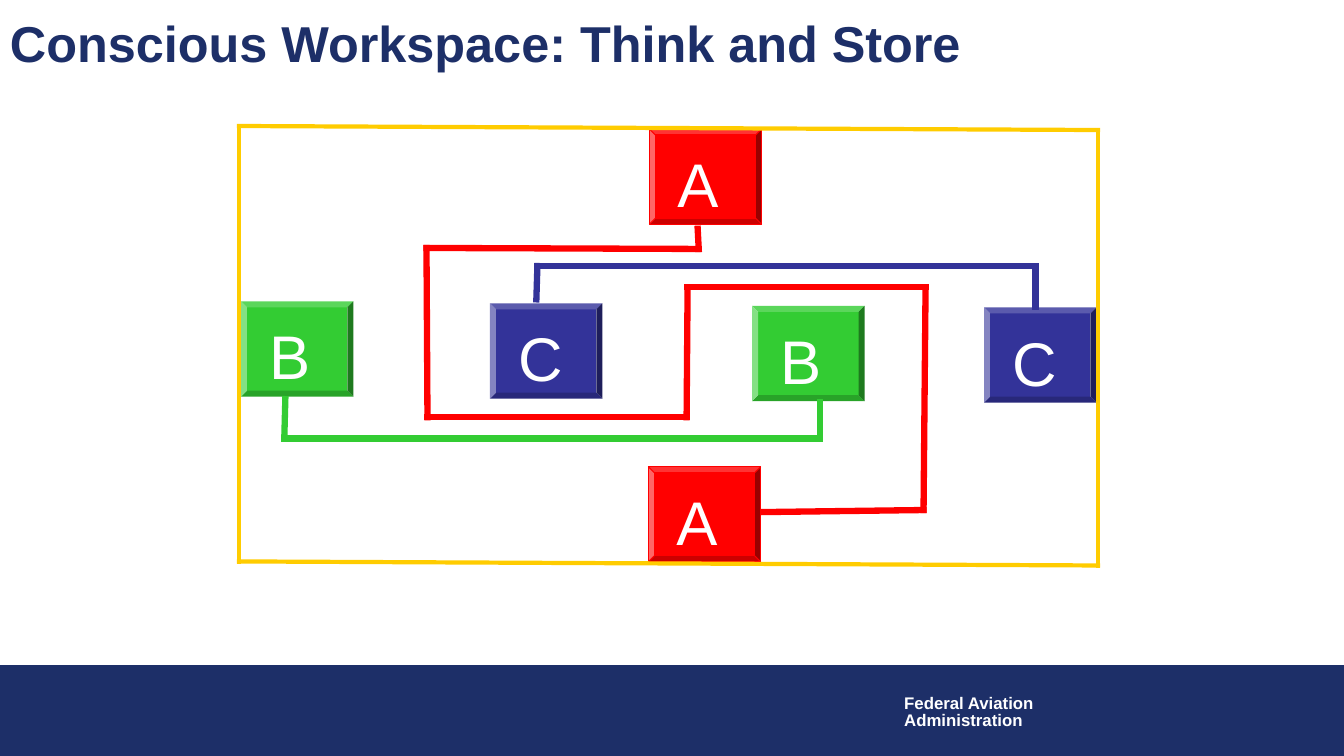
from itertools import pairwise

from lxml.etree import SubElement
from pptx import Presentation
from pptx.dml.color import RGBColor
from pptx.enum.shapes import MSO_CONNECTOR, MSO_SHAPE
from pptx.enum.text import MSO_ANCHOR, PP_ALIGN
from pptx.oxml.ns import qn
from pptx.util import Inches, Pt

NAVY = RGBColor(0x1D, 0x2F, 0x68)
WHITE = RGBColor(0xFF, 0xFF, 0xFF)
RED = RGBColor(0xFF, 0x00, 0x00)
GREEN = RGBColor(0x33, 0xCC, 0x33)
BLUE = RGBColor(0x33, 0x33, 0x99)
GOLD = RGBColor(0xFF, 0xCC, 0x00)


class Board:
    """Draws on one slide with a grid of cells a tenth of an inch wide and high."""

    cell = 0.1
    font = "Arial"

    def __init__(self, deck):
        self.slide = deck.slides.add_slide(deck.slide_layouts[6])
        self.shapes = self.slide.shapes

    def grid(self, *cells):
        return [Inches(n * self.cell) for n in cells]

    def style(self, frame, size, color, bold=False, space=None):
        for para in frame.paragraphs:
            para.alignment = PP_ALIGN.LEFT
            para.line_spacing = space
            for run in para.runs:
                run.font.name = self.font
                run.font.size = Pt(size)
                run.font.bold = bold
                run.font.color.rgb = color

    def block(self, kind, box, color, edge=None):
        shape = self.shapes.add_shape(kind, *self.grid(*box))
        shape.shadow.inherit = False
        shape.fill.solid()
        shape.fill.fore_color.rgb = color
        if edge:
            shape.line.color.rgb = edge
            shape.line.width = Pt(0.75)
        else:
            shape.line.fill.background()
        return shape

    def tile(self, letter, col, row, color, edge=None):
        shape = self.block(MSO_SHAPE.BEVEL, (col, row, 11.15, 9.45), color, edge)
        shape.adjustments[0] = 0.0625
        frame = shape.text_frame
        frame.text = letter
        frame.vertical_anchor = MSO_ANCHOR.TOP
        frame.margin_left, frame.margin_top = Inches(0.22), Inches(0.11)
        frame.margin_right = frame.margin_bottom = 0
        self.style(frame, 44, WHITE)

    def label(self, text, box, size, color, wrap=True, space=None):
        frame = self.shapes.add_textbox(*self.grid(*box)).text_frame
        frame.word_wrap = wrap
        frame.vertical_anchor = MSO_ANCHOR.MIDDLE if wrap else MSO_ANCHOR.TOP
        frame.text = text
        self.style(frame, size, color, True, space)

    def route(self, points, color, width):
        for start, end in pairwise(points):
            line = self.shapes.add_connector(
                MSO_CONNECTOR.STRAIGHT, *self.grid(*start, *end))
            line.line.color.rgb = color
            line.line.width = Pt(width)
            props = line._element.spPr
            props.find(qn("a:ln")).set("cap", "sq")
            SubElement(props, qn("a:effectLst"))


def main():
    deck = Presentation()
    deck.slide_width, deck.slide_height = Inches(13.33), Inches(7.5)
    board = Board(deck)

    board.block(MSO_SHAPE.RECTANGLE, (0, 66, 133.3, 9), NAVY, NAVY)
    board.label("Federal Aviation\nAdministration", (88.7, 68.5, 15, 4.4),
                12, WHITE, wrap=False, space=0.85)

    board.tile("A", 64.4, 12.8, RED, RED)
    board.tile("C", 97.6, 30.5, BLUE)
    board.tile("B", 74.6, 30.35, GREEN)
    board.tile("C", 48.6, 30.1, BLUE)
    board.tile("B", 23.9, 29.9, GREEN)
    board.tile("A", 64.3, 46.3, RED, RED)

    board.route([(28.3, 39.6), (28.2, 43.5), (81.3, 43.5), (81.3, 39.9)],
                GREEN, 4.5)
    board.route([(53.2, 29.7), (53.3, 26.4), (102.7, 26.4), (102.7, 30.4)],
                BLUE, 4.5)
    board.route([(23.7, 12.5), (108.9, 12.9), (108.9, 56.1), (23.7, 55.7),
                 (23.7, 12.5)], GOLD, 3)

    board.label("Conscious Workspace: Think and Store", (0, 0.9, 123.5, 6.7),
                36, NAVY)

    board.route([(69.2, 22.7), (69.3, 24.7), (42.3, 24.6), (42.4, 41.4),
                 (68.1, 41.4), (68.2, 28.5), (91.8, 28.5), (91.6, 50.6),
                 (75.8, 50.8)], RED, 4.5)

    deck.save("out.pptx")


if __name__ == "__main__":
    main()
